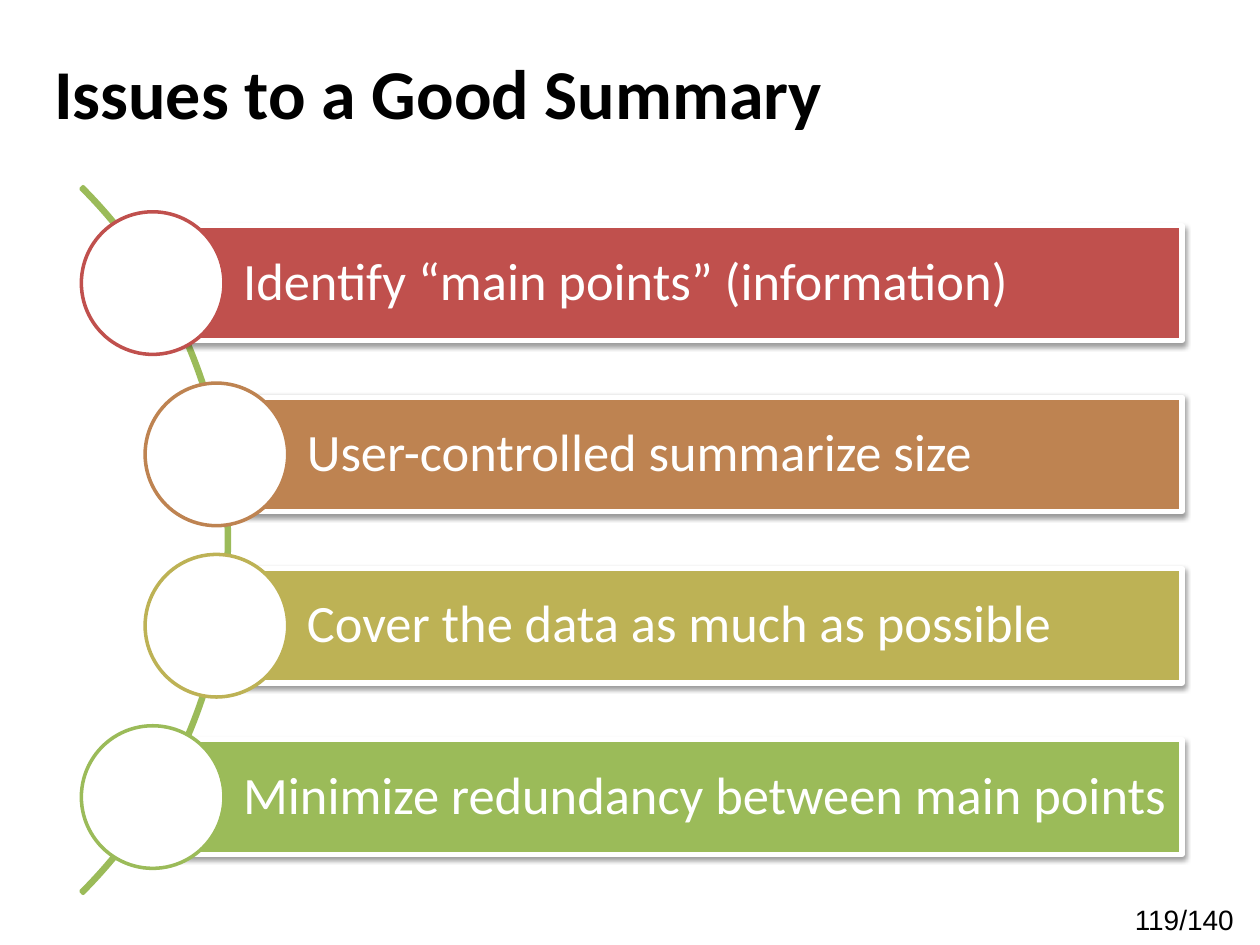
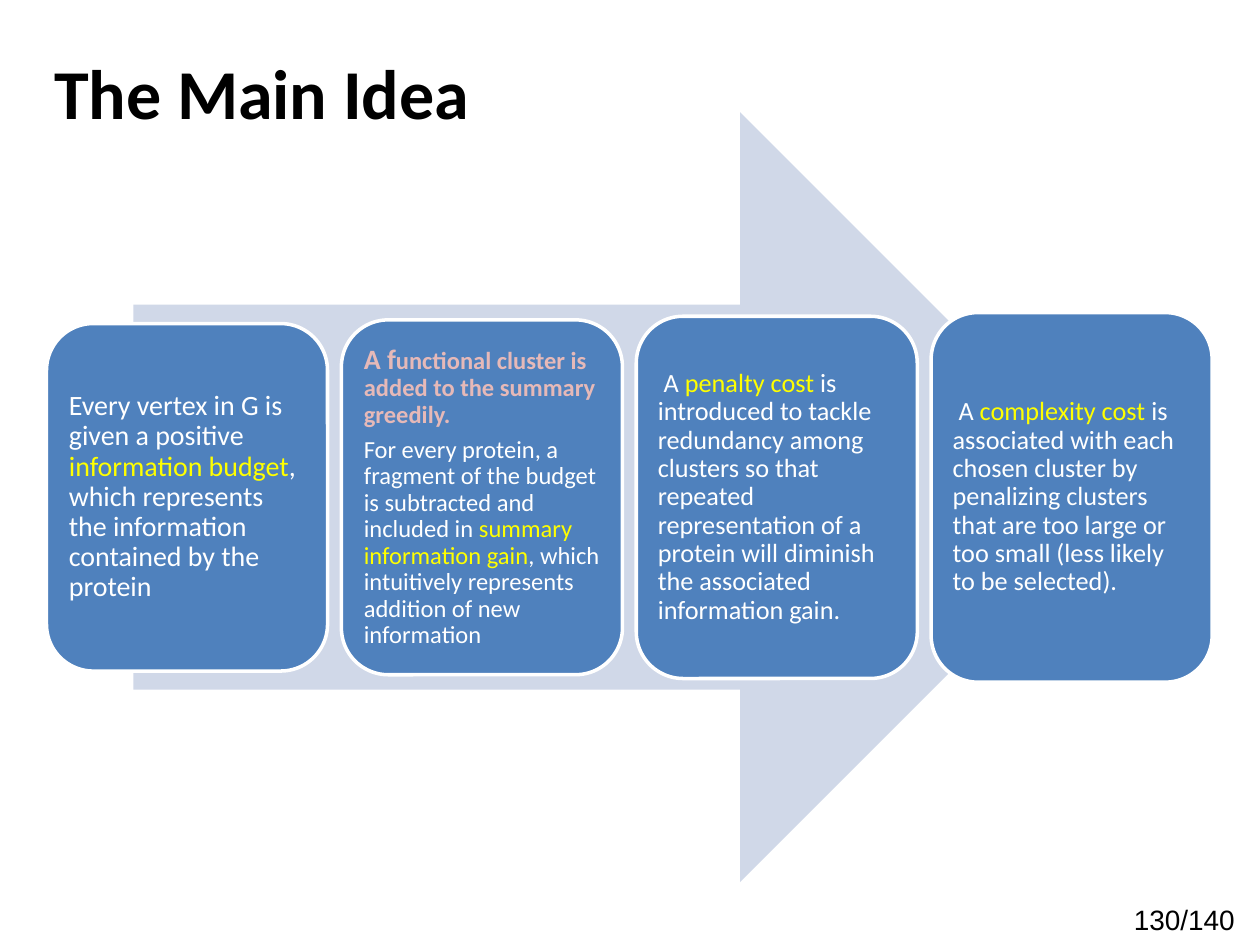
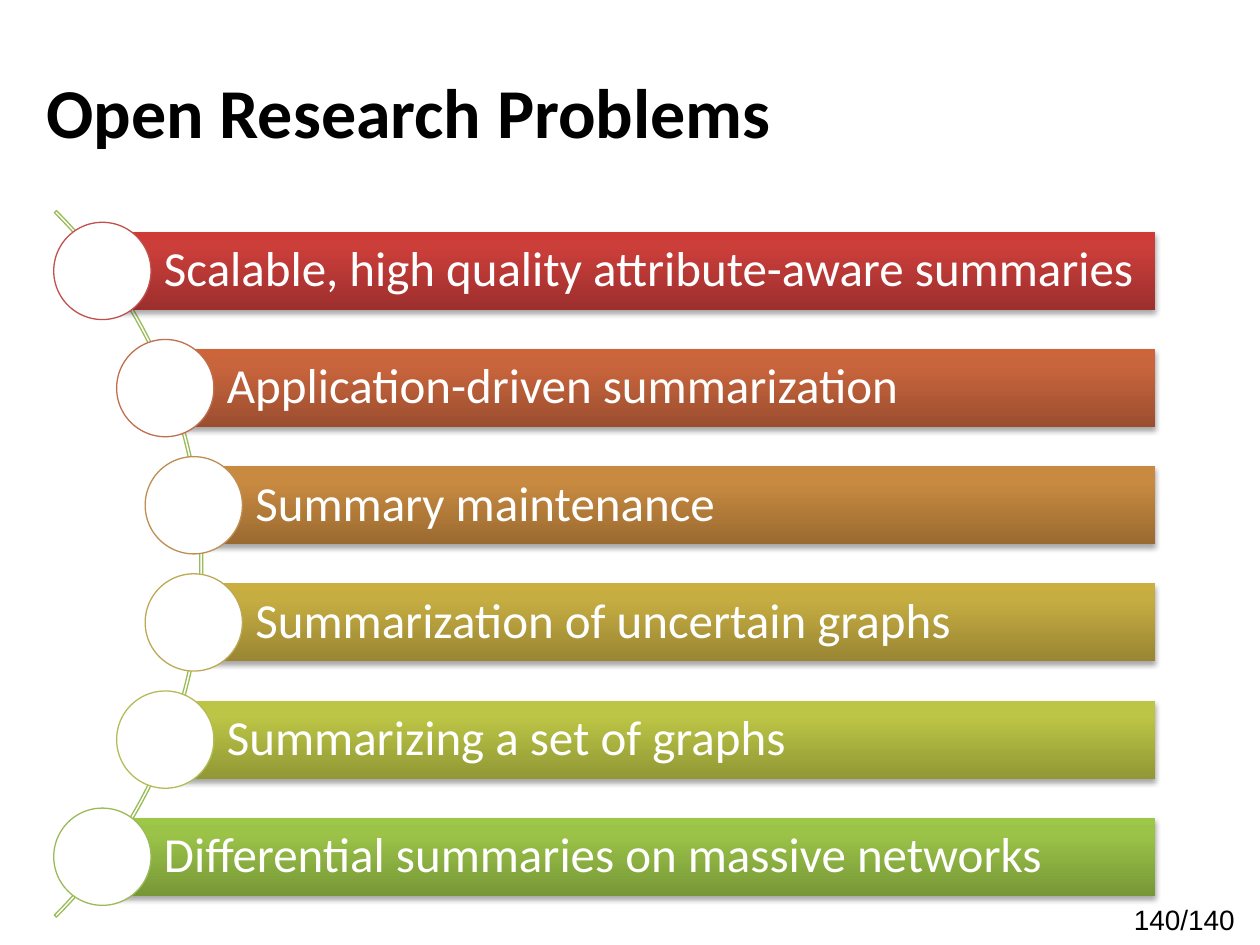
import math
from dataclasses import dataclass

from lxml import etree
from pptx import Presentation
from pptx import util as u
from pptx.dml import color
from pptx.enum import shapes, text
from pptx.oxml import ns


@dataclass(frozen=True)
class Theme:
    body: str = "Calibri"
    footer: str = "Arial"
    black: str = "000000"
    white: str = "FFFFFF"
    green: str = "9BBB59"
    blue: str = "4F81BD"
    pale: str = "D0D8E8"
    yellow: str = "FFFF00"
    pink: str = "E6B9B8"
    title_size: int = 40
    footer_size: int = 16
    line_spacing: float = 0.9


T = Theme()
TOTAL = 140
TITLE_AT = (23.8, 30.2, 617.8, 44.6)
LAST_TITLE_AT = (19.4, 41, 612, 44.6)
FOOTER_AT = (637.2, 511.9, 83.5, 28.1)

# text, circle line colour, bar fill: one colour or gradient from bottom to top
ISSUES = [
    ("Identify “main points” (information)", "C0504D", ["C0504D"]),
    ("User-controlled summarize size", "BE8351", ["BE8351"]),
    ("Cover the data as much as possible", "BDB255", ["BDB255"]),
    ("Minimize redundancy between main points", T.green, [T.green]),
]
PROBLEMS = [
    ("Scalable, high quality attribute-aware summaries", "C0504D", ["9C2F2D", "CB3E3A", "CE3B37"]),
    ("Application-driven summarization", "BF6F4F", ["9B4E2F", "C9653D", "CD643A"]),
    ("Summary maintenance", "BE8D52", ["9A6A31", "C88A40", "CB8B3D"]),
    ("Summarization of uncertain graphs", "BDA954", ["998533", "C6AD42", "CAAF40"]),
    ("Summarizing a set of graphs", "B5BC57", ["919835", "BCC545", "BFC843"]),
    ("Differential summaries on massive networks", T.green, ["779737", "9BC348", "9DC746"]),
]
GRADIENT_STOPS = (0, 80, 100)

ISSUES_STYLE = dict(centre=(-154.4, 308.6), pitch=97.9, bar=65.4, circle=81.5, right=675.5,
                    size=30, edge=3, line=2, shadow=(38, 1.6))
PROBLEMS_STYLE = dict(centre=(-169.6, 322.2), pitch=66.95, bar=44.6, circle=55.6, right=660.2,
                      size=28, edge=0, line=0.75, shadow=(35, 1.8))
ARC_DIAMETER = 571
ARC_OFFSET = 3.2

# each step: text inset, then paragraphs of (text, size, colour, bold)
STEPS = [
    (5, [[("Every vertex in G is given a positive ", 16, T.white, False),
          ("information budget", 16, T.yellow, False),
          (", which represents the information contained by the protein", 16, T.white, False)]]),
    (5, [[("A f", 16, T.pink, True),
          ("unctional cluster is added to the summary greedily.", 14, T.pink, True)],
         [("For every protein, a fragment of the budget is subtracted and included in ",
           14, T.white, False),
          ("summary information gain", 14, T.yellow, False),
          (", which intuitively represents addition of new information", 14, T.white, False)]]),
    (4.5, [[(" A ", 15, T.white, False),
            ("penalty cost", 15, T.yellow, False),
            (" is introduced to tackle redundancy among clusters so that repeated representation"
             " of a protein will diminish the associated information gain.", 15, T.white, False)]]),
    (4.5, [[(" A ", 15, T.white, False),
            ("complexity cost", 15, T.yellow, False),
            (" is associated with each chosen cluster by penalizing clusters that are too large"
             " or too small (less likely to be selected).", 15, T.white, False)]]),
]
ARROW_AT = (76.3, 64.1, 566.6, 439.9)
STEP_LEFT, STEP_PITCH, STEP_WIDTH = 26.6, 168.5, 160.6
STEP_MIDDLE, STEP_HEIGHT, STEP_GROWTH = 284.2, 198.6, 4.2
PARAGRAPH_GAP = 5


def rgb(value):
    return color.RGBColor.from_string(value)


def assign(target, values):
    for name, value in values.items():
        setattr(target, name, value)


def write(sp, paragraphs, font=T.body, frame=None, para=None):
    """Fill a shape with paragraphs of (text, size, colour, bold) runs."""
    tf = sp.text_frame
    assign(tf, dict(word_wrap=True, vertical_anchor=text.MSO_ANCHOR.MIDDLE) | (frame or {}))
    for i, runs in enumerate(paragraphs):
        p = tf.add_paragraph() if i else tf.paragraphs[0]
        assign(p, dict(alignment=text.PP_ALIGN.LEFT) | (para or {}))
        if i < len(paragraphs) - 1:
            p.space_after = u.Pt(PARAGRAPH_GAP)
        for words, size, ink, bold in runs:
            r = p.add_run()
            r.text = words
            assign(r.font, dict(name=font, size=u.Pt(size), bold=bold))
            r.font.color.rgb = rgb(ink)


def add_text(s, at, words, size, **options):
    sp = s.shapes.add_textbox(*map(u.Pt, at))
    write(sp, [[(words, size, T.black, options.pop("bold", False))]], **options)


def paint(sp, colours):
    """Fill with one colour, several gradient colours, or nothing."""
    if not colours:
        sp.fill.background()
    elif len(colours) == 1:
        sp.fill.solid()
        sp.fill.fore_color.rgb = rgb(colours[0])
    else:
        sp.fill.gradient()
        sp.fill.gradient_angle = 90
        stops = sp._element.spPr.find(".//" + ns.qn("a:gsLst"))
        for stop in list(stops):
            stops.remove(stop)
        for place, value in zip(GRADIENT_STOPS, colours):
            stop = etree.SubElement(stops, ns.qn("a:gs"), pos=str(place * 1000))
            etree.SubElement(stop, ns.qn("a:srgbClr"), val=value)


def add_shape(s, kind, at, colours, line=None, width=0):
    sp = s.shapes.add_shape(kind, *map(u.Pt, at))
    sp.shadow.inherit = False
    paint(sp, colours)
    if width:
        sp.line.color.rgb = rgb(line)
        sp.line.width = u.Pt(width)
    else:
        sp.line.fill.background()
    return sp


def drop_shadow(sp, opacity, distance):
    effects = sp._element.spPr.find(ns.qn("a:effectLst"))
    shadow = etree.SubElement(effects, ns.qn("a:outerShdw"), blurRad=str(u.Pt(3.1)),
                              dist=str(u.Pt(distance)), dir="5400000", rotWithShape="0")
    ink = etree.SubElement(shadow, ns.qn("a:srgbClr"), val=T.black)
    etree.SubElement(ink, ns.qn("a:alpha"), val=str(opacity * 1000))


def add_slide(prs, title, number, title_at=TITLE_AT):
    s = prs.slides.add_slide(prs.slide_layouts[6])
    add_text(s, title_at, title, T.title_size, bold=True)
    return s, f"{number}/{TOTAL} "


def add_footer(s, label):
    add_text(s, FOOTER_AT, label, T.footer_size, font=T.footer,
             frame=dict(vertical_anchor=text.MSO_ANCHOR.TOP),
             para=dict(alignment=text.PP_ALIGN.CENTER))


def add_curved_list(s, items, style):
    """Bars headed by circles whose centres follow an arc."""
    kinds = shapes.MSO_SHAPE
    cx, cy = style["centre"]
    radius = ARC_DIAMETER / 2
    arc = add_shape(s, kinds.BLOCK_ARC, (cx - radius, cy - radius, ARC_DIAMETER, ARC_DIAMETER),
                    [], T.green, style["line"])
    for i, value in enumerate((189, 27, 3 / 1000)):
        arc.adjustments[i] = value
    height, diameter = style["bar"], style["circle"]
    frame = dict(margin_left=u.Pt(0.79 * height), margin_right=u.Pt(5),
                 margin_top=u.Pt(5.8), margin_bottom=u.Pt(5.8))
    for i, (words, outline, colours) in enumerate(items):
        dy = (i - (len(items) - 1) / 2) * style["pitch"]
        x = cx + math.sqrt(radius ** 2 - dy ** 2) - ARC_OFFSET
        y = cy + dy
        bar = add_shape(s, kinds.RECTANGLE, (x, y - height / 2, style["right"] - x, height),
                        colours, T.white, style["edge"])
        drop_shadow(bar, *style["shadow"])
        write(bar, [[(words, style["size"], T.white, False)]], frame=frame,
              para=dict(line_spacing=T.line_spacing))
        add_shape(s, kinds.OVAL, (x - diameter / 2, y - diameter / 2, diameter, diameter),
                  [T.white], outline, style["line"])


def add_steps(s):
    add_shape(s, shapes.MSO_SHAPE.RIGHT_ARROW, ARROW_AT, [T.pale])
    for i, (inset, paragraphs) in enumerate(STEPS):
        height = STEP_HEIGHT + i * STEP_GROWTH
        at = (STEP_LEFT + i * STEP_PITCH, STEP_MIDDLE - height / 2, STEP_WIDTH, height)
        box = add_shape(s, shapes.MSO_SHAPE.ROUNDED_RECTANGLE, at, [T.blue], T.white, 2)
        margins = {f"margin_{side}": u.Pt(inset) for side in ("left", "right", "top", "bottom")}
        write(box, paragraphs, frame=margins, para=dict(line_spacing=T.line_spacing))


def main():
    prs = Presentation()
    assign(prs, dict(slide_width=u.Pt(720), slide_height=u.Pt(540)))

    s, label = add_slide(prs, "Issues to a Good Summary", 119)
    add_curved_list(s, ISSUES, ISSUES_STYLE)
    add_footer(s, label)

    s, label = add_slide(prs, "The Main Idea", 130)
    add_steps(s)
    add_footer(s, label)

    s, label = add_slide(prs, "Open Research Problems", 140, LAST_TITLE_AT)
    add_curved_list(s, PROBLEMS, PROBLEMS_STYLE)
    add_footer(s, label)

    prs.save("out.pptx")


if __name__ == "__main__":
    main()
